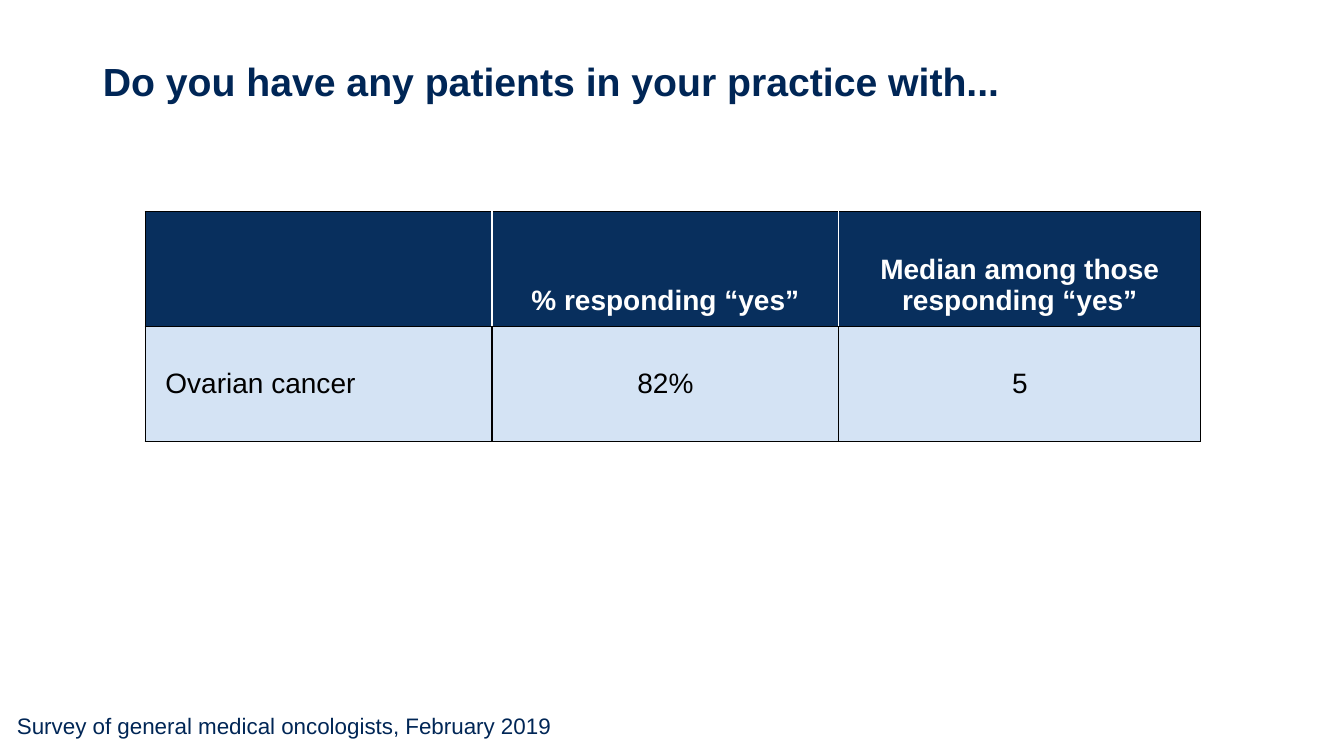
from dataclasses import dataclass

from lxml.etree import SubElement
from pptx import Presentation
from pptx.dml.color import RGBColor as RGB
from pptx.enum.text import MSO_ANCHOR as ANCHOR, MSO_AUTO_SIZE as AUTO, PP_ALIGN as ALIGN
from pptx.oxml.ns import qn
from pptx.util import Inches, Pt


@dataclass(frozen=True)
class Theme:
    font: str = "Arial"
    navy: str = "002656"
    header: str = "082F5D"
    band: str = "D4E3F4"
    white: str = "FFFFFF"
    black: str = "000000"
    title: int = 28
    cell: int = 20
    source: int = 16


theme = Theme()


def write(tf, text, size, color, bold=False, align=ALIGN.LEFT):
    p = tf.paragraphs[0]
    p.alignment = align
    r = p.add_run()
    r.text = text
    for name, value in {"name": theme.font, "size": Pt(size), "bold": bold}.items():
        setattr(r.font, name, value)
    r.font.color.rgb = RGB.from_string(color)


def add_border(cell, side, color):
    ln = SubElement(cell._tc.get_or_add_tcPr(), qn(f"a:{side}"), w=str(Pt(1)))
    SubElement(SubElement(ln, qn("a:solidFill")), qn("a:srgbClr"), val=color)


prs = Presentation()
prs.slide_width, prs.slide_height = Inches(13.33), Inches(7.5)
slide = prs.slides.add_slide(prs.slide_layouts[5])

title = slide.shapes.title
title.left, title.top = Inches(0.92), Inches(0)
title.width, title.height = Inches(11.5), Inches(1.66)
tf = title.text_frame
for name, value in {"word_wrap": True, "auto_size": AUTO.NONE, "vertical_anchor": ANCHOR.MIDDLE}.items():
    setattr(tf, name, value)
write(tf, "Do you have any patients in your practice with...", theme.title, theme.navy, bold=True)
tf.paragraphs[0].line_spacing = 0.9

source = slide.shapes.add_textbox(Inches(0.07), Inches(7.02), Inches(5.7), Inches(0.37))
source.text_frame.word_wrap = True
write(source.text_frame, "Survey of general medical oncologists, February 2019", theme.source, theme.navy)

rows = [
    ["", "% responding “yes”", "Median among those responding “yes”"],
    ["Ovarian cancer", "82%", "5"],
]
widths = [3.44, 3.44, 3.59]
row_formats = [
    {"fill": theme.header, "text": theme.white, "divider": theme.white, "bold": True, "anchor": ANCHOR.BOTTOM},
    {"fill": theme.band, "text": theme.black, "divider": theme.black, "bold": False, "anchor": ANCHOR.MIDDLE},
]
margins = {"margin_left": 0.2, "margin_right": 0.2, "margin_top": 0.1, "margin_bottom": 0.1}

table = slide.shapes.add_table(
    len(rows), len(widths), Inches(1.44), Inches(2.1), Inches(sum(widths)), Inches(2.28)
).table
for column, width in zip(table.columns, widths):
    column.width = Inches(width)

last = len(widths) - 1
for i, (texts, fmt) in enumerate(zip(rows, row_formats)):
    table.rows[i].height = Inches(1.14)
    for j, text in enumerate(texts):
        cell = table.cell(i, j)
        cell.vertical_anchor = fmt["anchor"]
        for name, value in margins.items():
            setattr(cell, name, Inches(value))
        borders = {
            "lnL": theme.black if j == 0 else fmt["divider"],
            "lnR": theme.black if j == last else fmt["divider"],
            "lnT": theme.black,
            "lnB": theme.black,
        }
        for side, color in borders.items():
            add_border(cell, side, color)
        cell.fill.solid()
        cell.fill.fore_color.rgb = RGB.from_string(fmt["fill"])
        if text:
            align = ALIGN.CENTER if j else ALIGN.LEFT
            write(cell.text_frame, text, theme.cell, fmt["text"], fmt["bold"], align)

prs.save("out.pptx")
